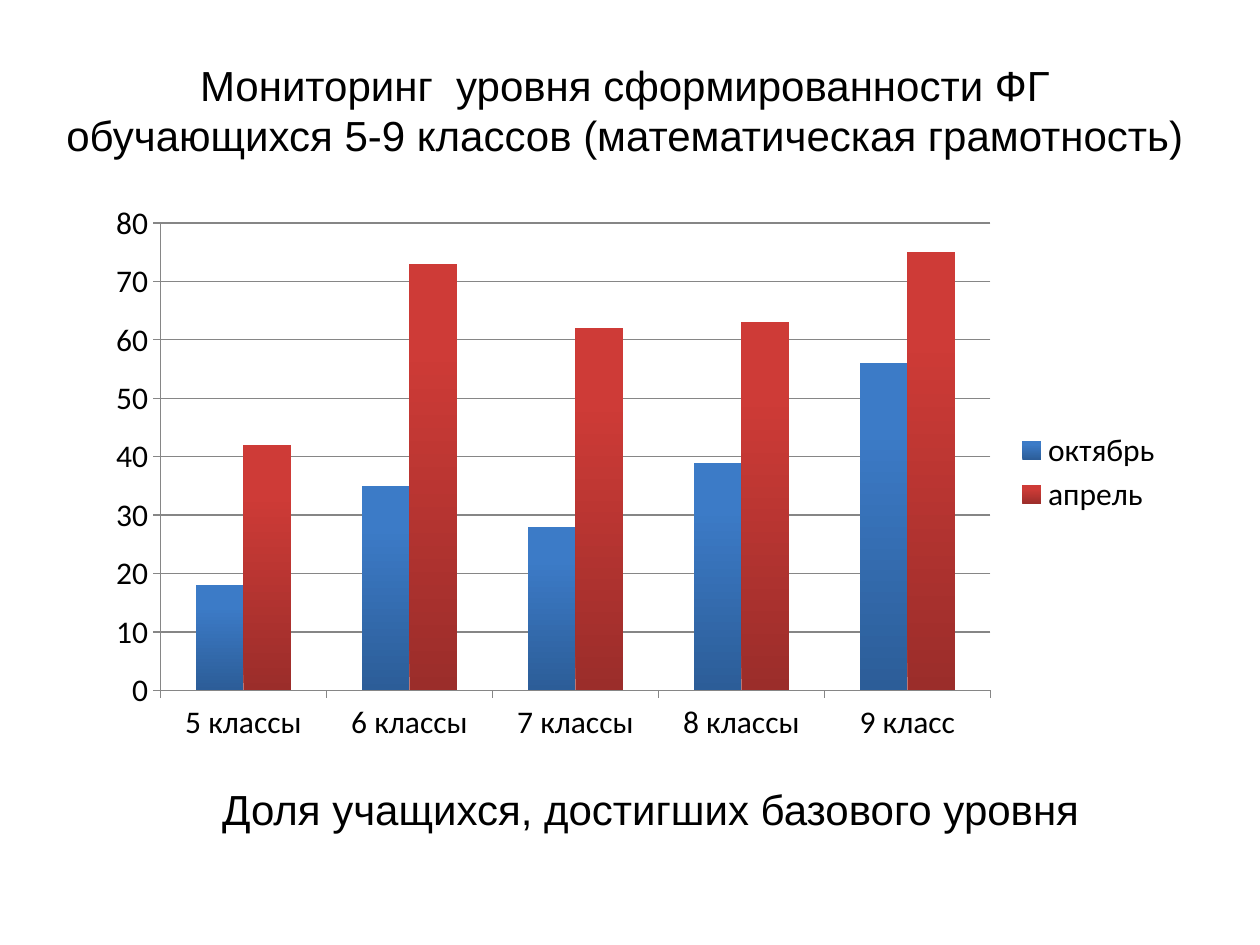
from typing import NamedTuple

from pptx import Presentation
from pptx import util as u
from pptx.chart.data import CategoryChartData
from pptx.dml.color import RGBColor
from pptx.enum import chart as ch, text

COLORS = {
    "text": "000000",
    "line": "868686",
    "blue_dark": "2C5D98",
    "blue_light": "3C7BC7",
    "red_dark": "9B2D2A",
    "red_light": "CE3B37",
}


class Series(NamedTuple):
    name: str
    values: tuple[int, ...]
    dark: str
    light: str


CLASSES = ("5 классы", "6 классы", "7 классы", "8 классы", "9 класс")
SERIES = (
    Series("октябрь", (18, 35, 28, 39, 56), "blue_dark", "blue_light"),
    Series("апрель", (42, 73, 62, 63, 75), "red_dark", "red_light"),
)


def rgb(name: str) -> RGBColor:
    return RGBColor.from_string(COLORS[name])


def add_text(s, content: str, left: float, top: float, width: float, height: float,
             *, size: float = 24, font: str = "Arial", color: str = "text"):
    sp = s.shapes.add_textbox(u.Inches(left), u.Inches(top),
                              u.Inches(width), u.Inches(height))
    tf = sp.text_frame
    tf.word_wrap = True
    tf.auto_size = text.MSO_AUTO_SIZE.SHAPE_TO_FIT_TEXT
    p = tf.paragraphs[0]
    p.alignment = text.PP_ALIGN.CENTER
    r = p.add_run()
    r.text = content
    r.font.size = u.Pt(size)
    r.font.name = font
    r.font.color.rgb = rgb(color)
    return sp


def shade_bars(series, dark: str, light: str) -> None:
    """Fill the bars from dark at the foot to light at the top."""
    fill = series.format.fill
    fill.gradient()
    fill.gradient_angle = 90
    for stop, color, position in zip(fill.gradient_stops, (dark, light), (0, 0.8)):
        stop.color.rgb = rgb(color)
        stop.position = position
    series.format.line.fill.background()
    series.invert_if_negative = False


def style_line(line) -> None:
    line.color.rgb = rgb("line")
    line.width = u.Pt(0.75)


def add_level_chart(s) -> None:
    data = CategoryChartData(number_format="General")
    data.categories = CLASSES
    for item in SERIES:
        data.add_series(item.name, item.values)
    chart = s.shapes.add_chart(
        ch.XL_CHART_TYPE.COLUMN_CLUSTERED, u.Inches(0.75), u.Inches(1.53),
        u.Inches(8.58), u.Inches(4.44), data).chart

    chart.has_title = False
    chart.font.name = "Calibri"
    chart.font.size = u.Pt(18)
    chart.font.color.rgb = rgb("text")
    chart.has_legend = True
    chart.legend.position = ch.XL_LEGEND_POSITION.RIGHT
    chart.legend.include_in_layout = False

    plot = chart.plots[0]
    plot.vary_by_categories = False
    plot.gap_width = 150
    plot.overlap = 0
    for series, item in zip(plot.series, SERIES):
        shade_bars(series, item.dark, item.light)

    for axis in (chart.category_axis, chart.value_axis):
        axis.major_tick_mark = ch.XL_TICK_MARK.OUTSIDE
        axis.minor_tick_mark = ch.XL_TICK_MARK.NONE
        style_line(axis.format.line)
    values = chart.value_axis
    values.minimum_scale = 0
    values.maximum_scale = 80
    values.major_unit = 10
    values.has_major_gridlines = True
    style_line(values.major_gridlines.format.line)


def main() -> None:
    prs = Presentation()
    prs.slide_width = u.Inches(10)
    prs.slide_height = u.Inches(7.5)
    s = prs.slides.add_slide(prs.slide_layouts[6])
    add_text(s, "Доля учащихся, достигших базового уровня", 0.58, 6.17, 9.17, 0.5)
    add_level_chart(s)
    add_text(s, "Мониторинг  уровня сформированности ФГ обучающихся 5-9 классов "
                "(математическая грамотность)", 0.42, 0.42, 9.08, 0.91)
    prs.save("out.pptx")


if __name__ == "__main__":
    main()
